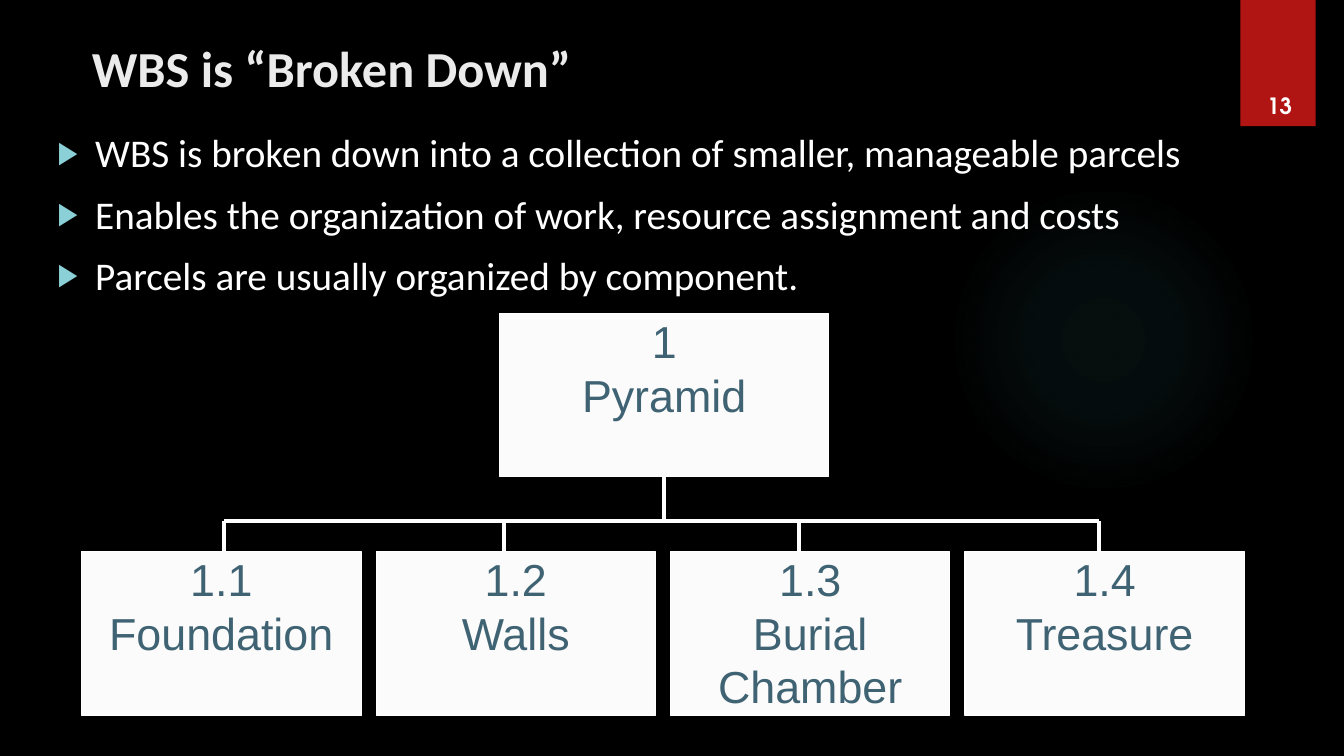
from lxml import etree
from pptx import Presentation
from pptx.dml.color import RGBColor
from pptx.enum.shapes import MSO_CONNECTOR, MSO_SHAPE
from pptx.enum.text import MSO_ANCHOR, PP_ALIGN
from pptx.oxml import parse_xml
from pptx.oxml.ns import nsdecls, qn
from pptx.util import Cm, Pt

RECTANGLE, OVAL = MSO_SHAPE.RECTANGLE, MSO_SHAPE.OVAL
STRAIGHT = MSO_CONNECTOR.STRAIGHT
CENTER = PP_ALIGN.CENTER
TOP, BOTTOM = MSO_ANCHOR.TOP, MSO_ANCHOR.BOTTOM

TITLE = "WBS is “Broken Down”"
BULLETS = [
    "WBS is broken down into a collection of smaller, manageable parcels",
    "Enables the organization of work, resource assignment and costs",
    "Parcels are usually organized by component.",
]
ROOT = ("1", "Pyramid")
PARCELS = [("1.1", "Foundation"), ("1.2", "Walls"),
           ("1.3", "Burial Chamber"), ("1.4", "Treasure")]
PAGE_NUMBER = "13"

COLORS = {"background": "000000", "glow": "50B9C1", "tab": "B01513",
          "box": "FBFBFB", "line": "FFFFFF", "box text": "3F6373",
          "title": "EBEBEB", "body": "FFFFFF", "bullet": "8AD0D6"}
GLOW_STOPS = [(0, 7), (36, 6), (69, 0)]  # position and opacity, in percent

# Chart geometry in centimetres
BOX_HEIGHT = 4.12
ROOT_LEFT, ROOT_TOP, ROOT_WIDTH = 12.6, 7.9, 8.28
PARCEL_LEFT, PARCEL_TOP, PARCEL_WIDTH, PARCEL_STEP = 2.06, 13.9, 7.04, 7.42
BAR_TOP, STEM_BOTTOM = 13.13, 15.19
STEMS = [5.64, 12.7, 20.14, 27.69]


def color(name):
    return RGBColor.from_string(COLORS[name])


def add_span(para, text, size, font, color_name, bold=False):
    span = para.add_run()
    span.text = text
    span.font.size = Pt(size)
    span.font.name = font
    span.font.bold = bold
    span.font.color.rgb = color(color_name)


def add_plain_shape(page, kind, left, top, width, height):
    shape = page.shapes.add_shape(kind, Cm(left), Cm(top), Cm(width), Cm(height))
    shape.shadow.inherit = False
    shape.line.fill.background()
    return shape


def add_glow(page):
    """Add the faint round glow, a radial gradient that fades out."""
    glow = add_plain_shape(page, OVAL, 23.9, 4.65, 7.82, 7.82)
    stops = "".join(
        f'<a:gs pos="{position * 1000}"><a:srgbClr val="{COLORS["glow"]}">'
        f'<a:alpha val="{opacity * 1000}"/></a:srgbClr></a:gs>'
        for position, opacity in GLOW_STOPS)
    gradient = parse_xml(
        f'<a:gradFill {nsdecls("a")} rotWithShape="1"><a:gsLst>{stops}</a:gsLst>'
        '<a:path path="circle"><a:fillToRect l="50000" t="50000" r="50000" b="50000"/>'
        '</a:path></a:gradFill>')
    properties = glow._element.spPr
    properties.find(qn("a:prstGeom")).addnext(gradient)


def add_line(page, x1, y1, x2, y2):
    line = page.shapes.add_connector(STRAIGHT, Cm(x1), Cm(y1), Cm(x2), Cm(y2))
    line.line.color.rgb = color("line")
    line.line.width = Pt(3)
    etree.SubElement(line._element.spPr, qn("a:effectLst"))


def add_parcel(page, left, top, width, lines):
    box = add_plain_shape(page, RECTANGLE, left, top, width, BOX_HEIGHT)
    box.fill.solid()
    box.fill.fore_color.rgb = color("box")
    box.line.color.rgb = color("line")
    box.line.width = Pt(0.75)
    frame = box.text_frame
    frame.word_wrap = True
    frame.vertical_anchor = TOP
    frame.margin_left = frame.margin_right = 0
    frame.margin_top = frame.margin_bottom = 0
    for index, text in enumerate(lines):
        para = frame.add_paragraph() if index else frame.paragraphs[0]
        para.alignment = CENTER
        add_span(para, text, 32, "Arial", "box text")


def add_text_box(page, left, top, width, height):
    box = page.shapes.add_textbox(Cm(left), Cm(top), Cm(width), Cm(height))
    box.text_frame.word_wrap = True
    return box.text_frame


def add_bullet(para):
    properties = para._p.get_or_add_pPr()
    properties.set("marL", str(Cm(0.95)))
    properties.set("indent", str(-Cm(0.95)))
    bullet_color = etree.SubElement(properties, qn("a:buClr"))
    etree.SubElement(bullet_color, qn("a:srgbClr"), val=COLORS["bullet"])
    etree.SubElement(properties, qn("a:buSzPct"), val="80000")
    etree.SubElement(properties, qn("a:buFont"), typeface="Arial")
    etree.SubElement(properties, qn("a:buChar"), char="▶")


def main():
    deck = Presentation()
    deck.slide_width, deck.slide_height = Cm(33.87), Cm(19.05)
    page = deck.slides.add_slide(deck.slide_layouts[5])
    page.background.fill.solid()
    page.background.fill.fore_color.rgb = color("background")

    add_glow(page)
    tab = add_plain_shape(page, RECTANGLE, 31.26, 0, 1.9, 3.18)
    tab.fill.solid()
    tab.fill.fore_color.rgb = color("tab")

    root_center = ROOT_LEFT + ROOT_WIDTH / 2
    add_line(page, root_center, ROOT_TOP + BOX_HEIGHT, root_center, BAR_TOP)
    add_line(page, STEMS[0], BAR_TOP, STEMS[-1], BAR_TOP)
    for stem in STEMS:
        add_line(page, stem, BAR_TOP, stem, STEM_BOTTOM)
    add_parcel(page, ROOT_LEFT, ROOT_TOP, ROOT_WIDTH, ROOT)
    for index, lines in enumerate(PARCELS):
        left = PARCEL_LEFT + index * PARCEL_STEP
        add_parcel(page, left, PARCEL_TOP, PARCEL_WIDTH, lines)

    title = page.shapes.title
    title.left, title.top = Cm(2.06), Cm(0.82)
    title.width, title.height = Cm(28.73), Cm(1.6)
    title.text_frame.vertical_anchor = TOP
    heading = title.text_frame.paragraphs[0]
    heading.alignment = PP_ALIGN.LEFT
    add_span(heading, TITLE, 36, "Calibri", "title", bold=True)

    body = add_text_box(page, 1.2, 3.12, 31.4, 5.05)
    for index, text in enumerate(BULLETS):
        para = body.add_paragraph() if index else body.paragraphs[0]
        add_bullet(para)
        if index:
            para.space_before = Pt(10)
        add_span(para, text, 28, "Calibri", "body")

    number = add_text_box(page, 31.5, 2.1, 1.5, 1.02)
    number.vertical_anchor = BOTTOM
    number.paragraphs[0].alignment = CENTER
    add_span(number.paragraphs[0], PAGE_NUMBER, 16, "TeX Gyre Adventor", "body", bold=True)

    deck.save("out.pptx")


if __name__ == "__main__":
    main()
